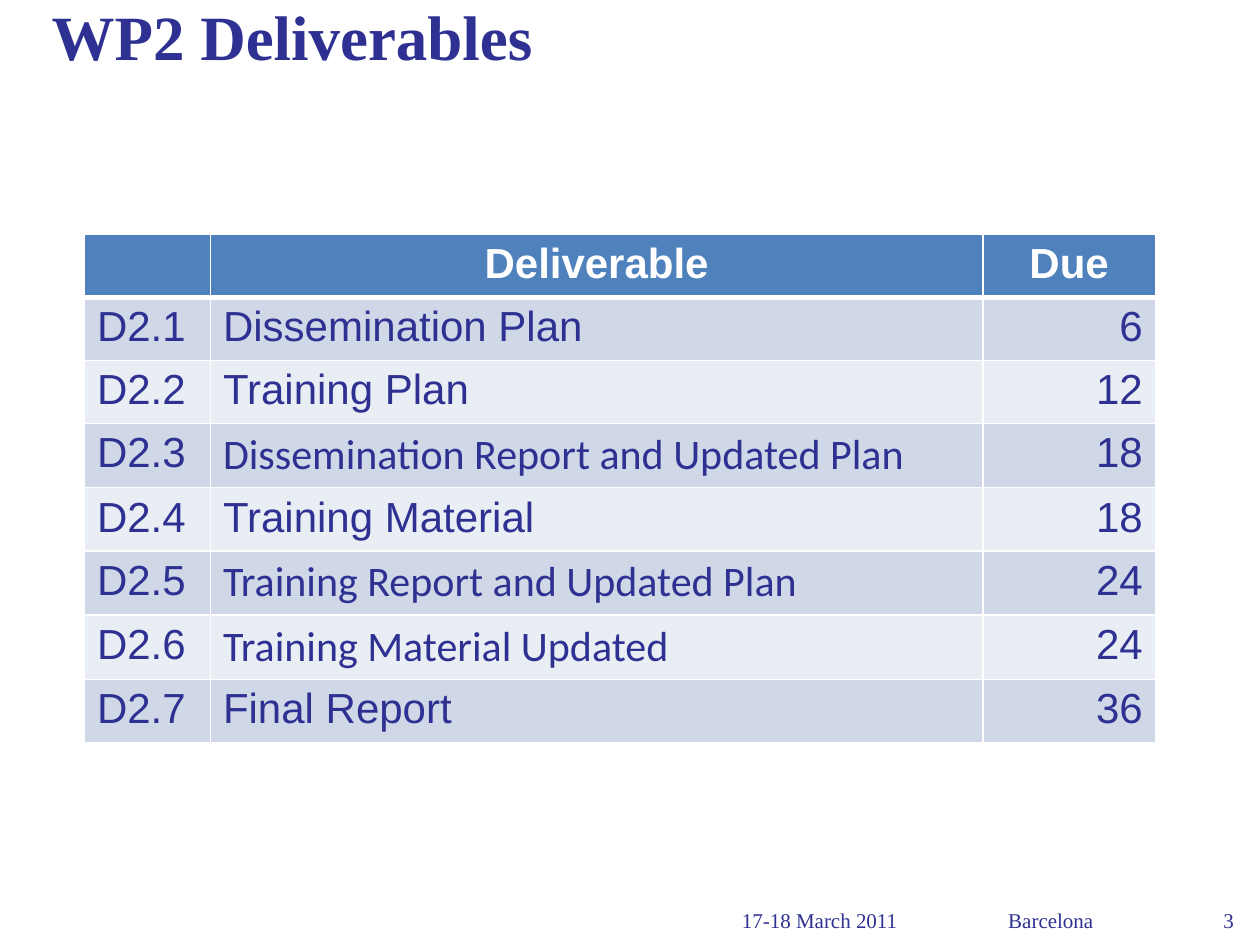
from dataclasses import dataclass

from lxml.etree import SubElement
from pptx import Presentation
from pptx.dml.color import RGBColor
from pptx.enum.text import MSO_ANCHOR, MSO_AUTO_SIZE, PP_ALIGN
from pptx.oxml.ns import qn
from pptx.util import Inches, Pt

NAVY, WHITE, BLUE = "2E3192", "FFFFFF", "4F81BD"
BANDS = ("D0D8E8", "E9EDF4")
SERIF = "Times New Roman"
ALIGNS = (PP_ALIGN.LEFT, PP_ALIGN.LEFT, PP_ALIGN.RIGHT)
COL_WIDTHS = (1, 6.13, 1.37)
HEADER_HEIGHT = 0.5
ROW_HEIGHTS = {"Arial": 0.47, "Calibri": 0.51}


@dataclass
class Deliverable:
    code: str
    name: str
    due: int
    font: str = "Arial"


@dataclass
class Footer:
    text: str
    left: float
    width: float
    align: PP_ALIGN


DELIVERABLES = [
    Deliverable("D2.1", "Dissemination Plan", 6),
    Deliverable("D2.2", "Training Plan", 12),
    Deliverable("D2.3", "Dissemination Report and Updated Plan", 18, "Calibri"),
    Deliverable("D2.4", "Training Material", 18),
    Deliverable("D2.5", "Training Report and Updated Plan", 24, "Calibri"),
    Deliverable("D2.6", "Training Material Updated", 24, "Calibri"),
    Deliverable("D2.7", "Final Report", 36),
]
FOOTERS = [
    Footer("17-18 March 2011", 5.79, 1.55, PP_ALIGN.LEFT),
    Footer("3", 9.3, 0.59, PP_ALIGN.RIGHT),
    Footer("Barcelona", 7.42, 1.84, PP_ALIGN.CENTER),
]


def rgb(color: str) -> RGBColor:
    return RGBColor.from_string(color)


def write(tf, text: str, font: str, size: float, color: str,
          align: PP_ALIGN = PP_ALIGN.LEFT, bold: bool = False) -> None:
    tf.text = text
    p = tf.paragraphs[0]
    p.alignment = align
    for r in p.runs:
        r.font.name = font
        r.font.size = Pt(size)
        r.font.bold = bold
        r.font.color.rgb = rgb(color)


def add_border(cell, side: str, width: float) -> None:
    ln = SubElement(cell._tc.get_or_add_tcPr(), qn(f"a:ln{side}"), w=str(Pt(width)))
    fill = SubElement(ln, qn("a:solidFill"))
    SubElement(fill, qn("a:srgbClr"), val=WHITE)


def style_cell(cell, fill: str, top: float = 1, bottom: float = 1) -> None:
    for side, width in (("L", 1), ("R", 1), ("T", top), ("B", bottom)):
        add_border(cell, side, width)
    cell.fill.solid()
    cell.fill.fore_color.rgb = rgb(fill)


def add_title(s, text: str) -> None:
    title = s.shapes.title
    title.left, title.top = Inches(0.31), Inches(0)
    title.width, title.height = Inches(6.53), Inches(0.56)
    tf = title.text_frame
    tf.auto_size = MSO_AUTO_SIZE.NONE
    tf.vertical_anchor = MSO_ANCHOR.MIDDLE
    write(tf, text, SERIF, 36, NAVY, bold=True)


def add_footer(s, footer: Footer) -> None:
    sp = s.shapes.add_textbox(Inches(footer.left), Inches(7.19),
                              Inches(footer.width), Inches(0.23))
    tf = sp.text_frame
    tf.word_wrap = True
    tf.vertical_anchor = MSO_ANCHOR.MIDDLE
    tf.margin_top = tf.margin_bottom = 0
    write(tf, footer.text, SERIF, 12, NAVY, footer.align)


def add_deliverables(s, items: list[Deliverable]) -> None:
    heights = [HEADER_HEIGHT] + [ROW_HEIGHTS[item.font] for item in items]
    table = s.shapes.add_table(len(heights), len(COL_WIDTHS), Inches(0.67), Inches(1.86),
                               Inches(sum(COL_WIDTHS)), Inches(sum(heights))).table
    for column, width in zip(table.columns, COL_WIDTHS):
        column.width = Inches(width)
    for row, height in zip(table.rows, heights):
        row.height = Inches(height)
    for col, text in enumerate(("", "Deliverable", "Due")):
        cell = table.cell(0, col)
        style_cell(cell, BLUE, bottom=3)
        write(cell.text_frame, text, "Arial", 24, WHITE, PP_ALIGN.CENTER, True)
    for row, item in enumerate(items, 1):
        texts = (item.code, item.name, str(item.due))
        fonts = ("Arial", item.font, "Arial")
        for col, (text, font, align) in enumerate(zip(texts, fonts, ALIGNS)):
            cell = table.cell(row, col)
            style_cell(cell, BANDS[(row - 1) % 2], top=3 if row == 1 else 1)
            write(cell.text_frame, text, font, 24, NAVY, align)


def main() -> None:
    prs = Presentation()
    prs.slide_width, prs.slide_height = Inches(10), Inches(7.5)
    s = prs.slides.add_slide(prs.slide_layouts[5])
    add_title(s, "WP2 Deliverables")
    for footer in FOOTERS:
        add_footer(s, footer)
    add_deliverables(s, DELIVERABLES)
    prs.save("out.pptx")


if __name__ == "__main__":
    main()
